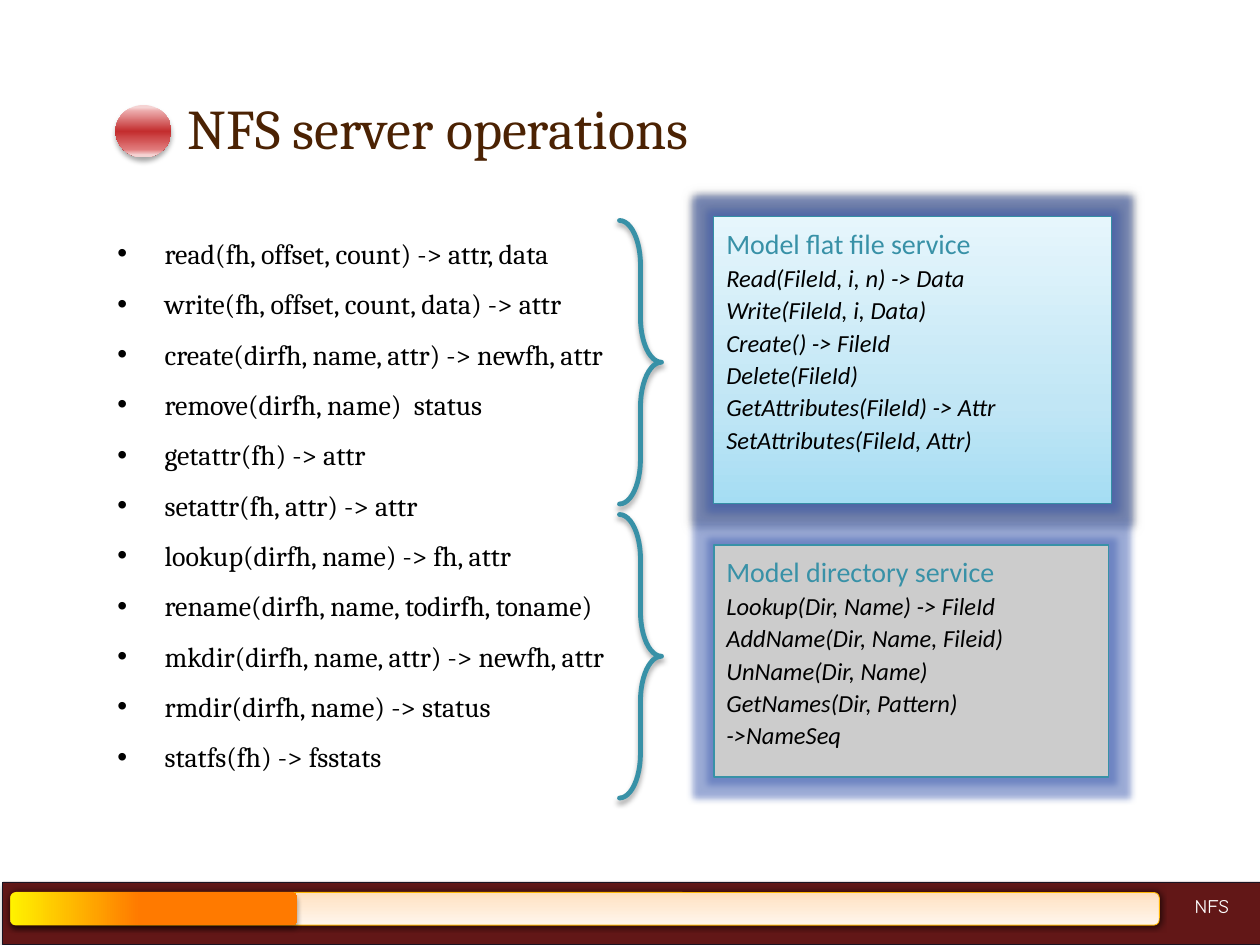
import pptx
import pptx.util
import pptx.dml.color
import pptx.enum.shapes
import pptx.enum.text
import pptx.oxml
import pptx.oxml.ns
import lxml.etree

Pt = pptx.util.Pt
SHAPE = pptx.enum.shapes.MSO_SHAPE
ALIGN = pptx.enum.text.PP_ALIGN
ANCHOR = pptx.enum.text.MSO_ANCHOR

TITLE = "NFS server operations "
OPERATIONS = [
    "read(fh, offset, count) -> attr, data",
    "write(fh, offset, count, data) -> attr",
    "create(dirfh, name, attr) -> newfh, attr",
    "remove(dirfh, name)  status",
    "getattr(fh) -> attr",
    "setattr(fh, attr) -> attr",
    "lookup(dirfh, name) -> fh, attr",
    "rename(dirfh, name, todirfh, toname)",
    "mkdir(dirfh, name, attr) -> newfh, attr",
    "rmdir(dirfh, name) -> status",
    "statfs(fh) -> fsstats",
]
FLAT_FILE_SERVICE = [
    "Model flat file service",
    "Read(FileId, i, n) -> Data",
    "Write(FileId, i, Data)",
    "Create() -> FileId",
    "Delete(FileId)",
    "GetAttributes(FileId) -> Attr",
    "SetAttributes(FileId, Attr)",
]
DIRECTORY_SERVICE = [
    "Model directory service",
    "Lookup(Dir, Name) -> FileId",
    "AddName(Dir, Name, Fileid)",
    "UnName(Dir, Name)",
    "GetNames(Dir, Pattern) \v->NameSeq",
]
FOOTER = "NFS"

THEME = {
    "serif": "Cambria", "sans": "Calibri", "footer_font": "Comic Neue",
    "title_size": 32, "heading_size": 16, "call_size": 14, "footer_size": 11,
    "text": "000000", "title": "4B2203", "teal": "3891A7", "white": "FFFFFF",
    "grey": "CCCCCC", "band": "621717", "band_line": "1A1422",
    "box_line": "348FA6", "track_line": "FEB604",
    "ball": ([(5, "F5D3D3"), (12, "EBA7A8"), (50, "C32D2E"),
              (85, "E17B7C"), (95, "F5D3D3")], 90),
    "sky": ([(0, "A5DDF3"), (35, "C1E6F5"), (100, "E6F6FC")], 270),
    "track": ([(0, "FFDFBC"), (35, "FFE8D0"), (100, "FFF6ED")], 270),
    "progress": ([(0, "FFF200"), (45, "FF7A00")], 0),
    "drop": (35, 3.1, 2, 90), "halo": (64, 4, 0, 0),
    "glow": ("4A66B4", 55, 8),
}


def rgb(code):
    return pptx.dml.color.RGBColor.from_string(code)


def add_colour(parent, code, alpha=100):
    colour = lxml.etree.SubElement(parent, pptx.oxml.ns.qn("a:srgbClr"), val=code)
    if alpha < 100:
        lxml.etree.SubElement(colour, pptx.oxml.ns.qn("a:alpha"), val=str(alpha * 1000))


def paint_gradient(shape, stops, angle):
    shape.fill.gradient()
    gradient = shape.element.spPr.find(pptx.oxml.ns.qn("a:gradFill"))
    stop_list = gradient.find(pptx.oxml.ns.qn("a:gsLst"))
    for stop in list(stop_list):
        stop_list.remove(stop)
    for position, code in stops:
        stop = lxml.etree.SubElement(stop_list, pptx.oxml.ns.qn("a:gs"), pos=str(position * 1000))
        add_colour(stop, code)
    gradient.find(pptx.oxml.ns.qn("a:lin")).set("ang", str(angle * 60000))


def add_effects(shape, shadow=None, glow=None):
    shape.shadow.inherit = False
    effects = shape.element.spPr.find(pptx.oxml.ns.qn("a:effectLst"))
    if glow:
        code, alpha, radius = glow
        halo = lxml.etree.SubElement(effects, pptx.oxml.ns.qn("a:glow"), rad=str(Pt(radius)))
        add_colour(halo, code, alpha)
    if shadow:
        alpha, blur, distance, angle = shadow
        drop = lxml.etree.SubElement(
            effects, pptx.oxml.ns.qn("a:outerShdw"), blurRad=str(Pt(blur)),
            dist=str(Pt(distance)), dir=str(angle * 60000), rotWithShape="0")
        add_colour(drop, THEME["text"], alpha)


def add_figure(parent, kind, box, fill=None, line=None, shadow=None, glow=None):
    shape = parent.add_shape(kind, *map(Pt, box))
    if fill is None:
        shape.fill.background()
    elif isinstance(fill, str):
        shape.fill.solid()
        shape.fill.fore_color.rgb = rgb(fill)
    else:
        paint_gradient(shape, *fill)
    if line:
        shape.line.color.rgb = rgb(line[0])
        shape.line.width = Pt(line[1])
    else:
        shape.line.fill.background()
    add_effects(shape, shadow, glow)
    return shape


def style(paragraph, font, size, colour, align=ALIGN.LEFT, italic=False, spacing=None):
    paragraph.alignment = align
    if spacing:
        paragraph.line_spacing = spacing
    for run in paragraph.runs:
        run.font.name = font
        run.font.size = Pt(size)
        run.font.color.rgb = rgb(colour)
        run.font.italic = italic


def add_bullet(paragraph, indent):
    properties = paragraph._p.get_or_add_pPr()
    properties.set("marL", str(Pt(indent)))
    properties.set("indent", str(-Pt(indent)))
    lxml.etree.SubElement(properties, pptx.oxml.ns.qn("a:buFont"), typeface="Arial")
    lxml.etree.SubElement(properties, pptx.oxml.ns.qn("a:buChar"), char="•")


def add_service(shapes, lines, box, **look):
    service = add_figure(shapes, SHAPE.RECTANGLE, box, glow=THEME["glow"], **look)
    frame = service.text_frame
    frame.word_wrap = True
    frame.vertical_anchor = ANCHOR.TOP
    frame.text = "\n".join(lines)
    heading, *calls = frame.paragraphs
    style(heading, THEME["sans"], THEME["heading_size"], THEME["teal"], spacing=1.1)
    for call in calls:
        style(call, THEME["sans"], THEME["call_size"], THEME["text"], italic=True, spacing=1.1)


def add_operations(shapes):
    operations = shapes.add_textbox(Pt(60), Pt(122), Pt(415), Pt(407)).text_frame
    operations.word_wrap = True
    operations.text = "\n".join(OPERATIONS)
    for operation in operations.paragraphs:
        add_bullet(operation, 27)
        style(operation, THEME["serif"], THEME["heading_size"], THEME["text"], spacing=1.5)


def add_title(shapes):
    title = shapes.title
    title.left, title.top, title.width, title.height = map(Pt, (-96, 44, 700, 57.6))
    title.text_frame.text = TITLE
    title.text_frame.vertical_anchor = ANCHOR.MIDDLE
    style(title.text_frame.paragraphs[0], THEME["serif"], THEME["title_size"],
          THEME["title"], ALIGN.CENTER)


def add_footer(shapes):
    footer = shapes.add_group_shape().shapes
    add_figure(footer, SHAPE.RECTANGLE, (1.5, 504, 720, 36), THEME["band"],
               (THEME["band_line"], 0.5), THEME["drop"])
    track = add_figure(footer, SHAPE.ROUNDED_RECTANGLE, (6, 510, 656.5, 18.7), THEME["track"],
                       (THEME["track_line"], 0.5), THEME["halo"])
    track.element.spPr.xfrm.set("flipV", "1")
    label = footer.add_textbox(Pt(659.5), Pt(507.5), Pt(66), Pt(21)).text_frame
    label.word_wrap = True
    label.text = FOOTER
    style(label.paragraphs[0], THEME["footer_font"], THEME["footer_size"],
          THEME["white"], ALIGN.CENTER)
    add_figure(footer, SHAPE.ROUNDED_RECTANGLE, (6, 510, 164, 18.7), THEME["progress"],
               shadow=THEME["drop"])


def main():
    deck = pptx.Presentation()
    deck.slide_width, deck.slide_height = Pt(720), Pt(540)
    shapes = deck.slides.add_slide(deck.slide_layouts[5]).shapes
    add_operations(shapes)
    add_title(shapes)
    add_figure(shapes, SHAPE.OVAL, (66, 60, 32, 30), THEME["ball"], shadow=THEME["drop"])
    for top in (126, 294):
        brace = add_figure(shapes, SHAPE.RIGHT_BRACE, (354, top, 24, 162),
                           line=(THEME["teal"], 2.75), shadow=THEME["drop"])
        brace.adjustments[0] = 1.06
        brace.line._get_or_add_ln().set("cap", "rnd")
    add_service(shapes, FLAT_FILE_SERVICE, (408, 124, 227, 164), fill=THEME["sky"],
                line=(THEME["box_line"], 0.5), shadow=THEME["halo"])
    add_service(shapes, DIRECTORY_SERVICE, (408, 311.5, 225.5, 132.5), fill=THEME["grey"],
                line=(THEME["teal"], 0.75))
    add_footer(shapes)
    deck.save("out.pptx")


if __name__ == "__main__":
    main()
